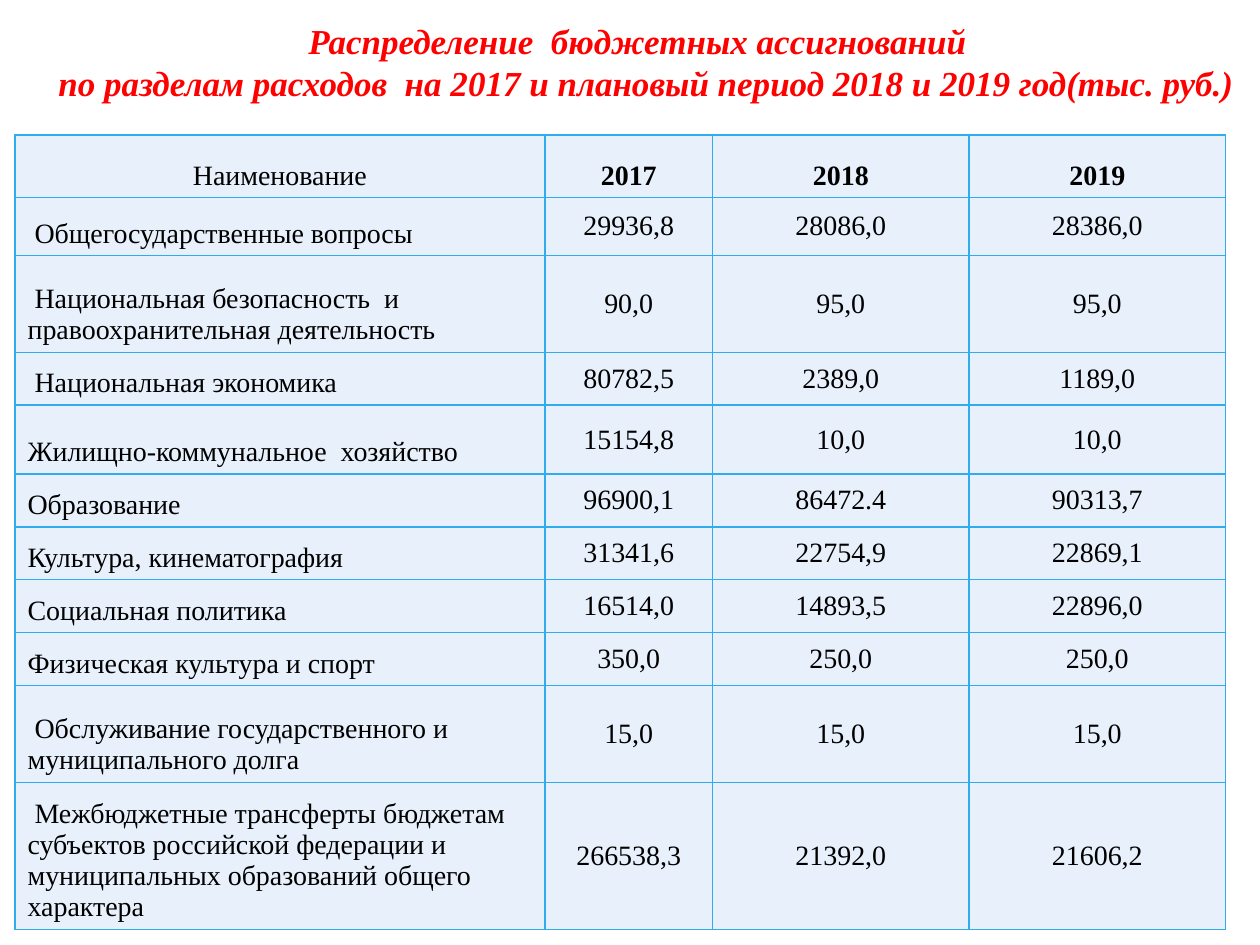
from lxml import etree
from pptx import Presentation
from pptx.dml.color import RGBColor
from pptx.enum import text
from pptx.oxml import ns
from pptx.util import Pt

HUES = {"title": "FF0000", "ink": "000000", "cell": "E8F1FB", "edge": "30ACEC"}
FONT = "Times New Roman"
TITLE = [
    "Распределение  бюджетных ассигнований ",
    " по разделам расходов  на 2017 и плановый период 2018 и 2019 год(тыс. руб.)",
]
ROWS = [
    (35.7, "Наименование", "2017", "2018", "2019"),
    (33.1, " Общегосударственные вопросы", "29936,8", "28086,0", "28386,0"),
    (55.4, " Национальная безопасность  и правоохранительная деятельность", "90,0", "95,0", "95,0"),
    (30.2, " Национальная экономика", "80782,5", "2389,0", "1189,0"),
    (39.4, "Жилищно-коммунальное  хозяйство", "15154,8", "10,0", "10,0"),
    (30.2, "Образование", "96900,1", "86472.4", "90313,7"),
    (30.2, "Культура, кинематография", "31341,6", "22754,9", "22869,1"),
    (30.2, "Социальная политика", "16514,0", "14893,5", "22896,0"),
    (30.2, "Физическая культура и спорт", "350,0", "250,0", "250,0"),
    (55.4, " Обслуживание государственного и муниципального долга", "15,0", "15,0", "15,0"),
    (83.2, " Межбюджетные трансферты бюджетам субъектов российской федерации "
           "и муниципальных образований общего характера", "266538,3", "21392,0", "21606,2"),
]
WIDTHS = [302.8, 95.8, 146.6, 146.6]


def add_run(para, words, size, hue, bold=False, slant=False):
    run = para.add_run()
    run.text = words
    run.font.name = FONT
    run.font.size = Pt(size)
    run.font.bold = bold
    run.font.italic = slant
    run.font.color.rgb = RGBColor.from_string(HUES[hue])


def add_edges(cell):
    props = cell._tc.get_or_add_tcPr()
    for spot, side in enumerate(("lnL", "lnR", "lnT", "lnB")):
        line = etree.Element(ns.qn("a:" + side), w=str(Pt(1)))
        fill = etree.SubElement(line, ns.qn("a:solidFill"))
        etree.SubElement(fill, ns.qn("a:srgbClr"), val=HUES["edge"])
        props.insert(spot, line)


deck = Presentation()
deck.slide_width, deck.slide_height = Pt(720), Pt(540)
slide = deck.slides.add_slide(deck.slide_layouts[6])

box = slide.shapes.add_textbox(Pt(19.4), Pt(9.4), Pt(694.8), Pt(51.1))
frame = box.text_frame
frame.word_wrap = True
frame.vertical_anchor = text.MSO_ANCHOR.MIDDLE
para = frame.paragraphs[0]
para.alignment = text.PP_ALIGN.CENTER
add_run(para, TITLE[0], 20, "title", True, True)
para.add_line_break()
add_run(para, TITLE[1], 20, "title", True, True)

high = sum(row[0] for row in ROWS)
table = slide.shapes.add_table(
    len(ROWS), len(WIDTHS), Pt(8.6), Pt(77.2), Pt(sum(WIDTHS)), Pt(high)
).table
table.horz_banding = False
for col, width in zip(table.columns, WIDTHS):
    col.width = Pt(width)

for r, (height, *words) in enumerate(ROWS):
    table.rows[r].height = Pt(height)
    for c, word in enumerate(words):
        cell = table.cell(r, c)
        cell.fill.solid()
        cell.fill.fore_color.rgb = RGBColor.from_string(HUES["cell"])
        add_edges(cell)
        low = r == 0 or c == 0
        cell.vertical_anchor = text.MSO_ANCHOR.BOTTOM if low else text.MSO_ANCHOR.MIDDLE
        para = cell.text_frame.paragraphs[0]
        mid = r == 0 or c > 0
        para.alignment = text.PP_ALIGN.CENTER if mid else text.PP_ALIGN.LEFT
        add_run(para, word, 16, "ink", bold=r == 0 and c > 0)

deck.save("out.pptx")
